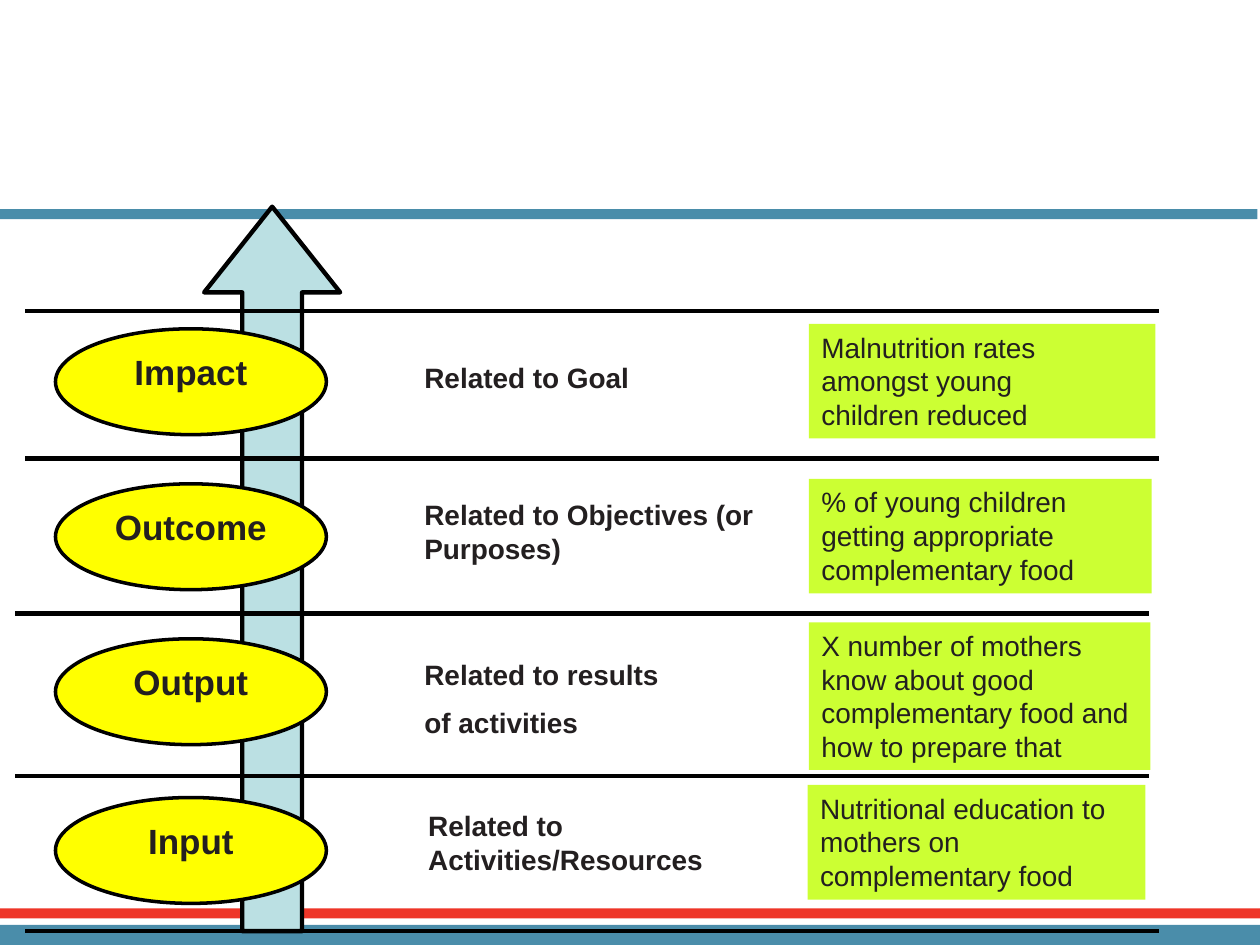
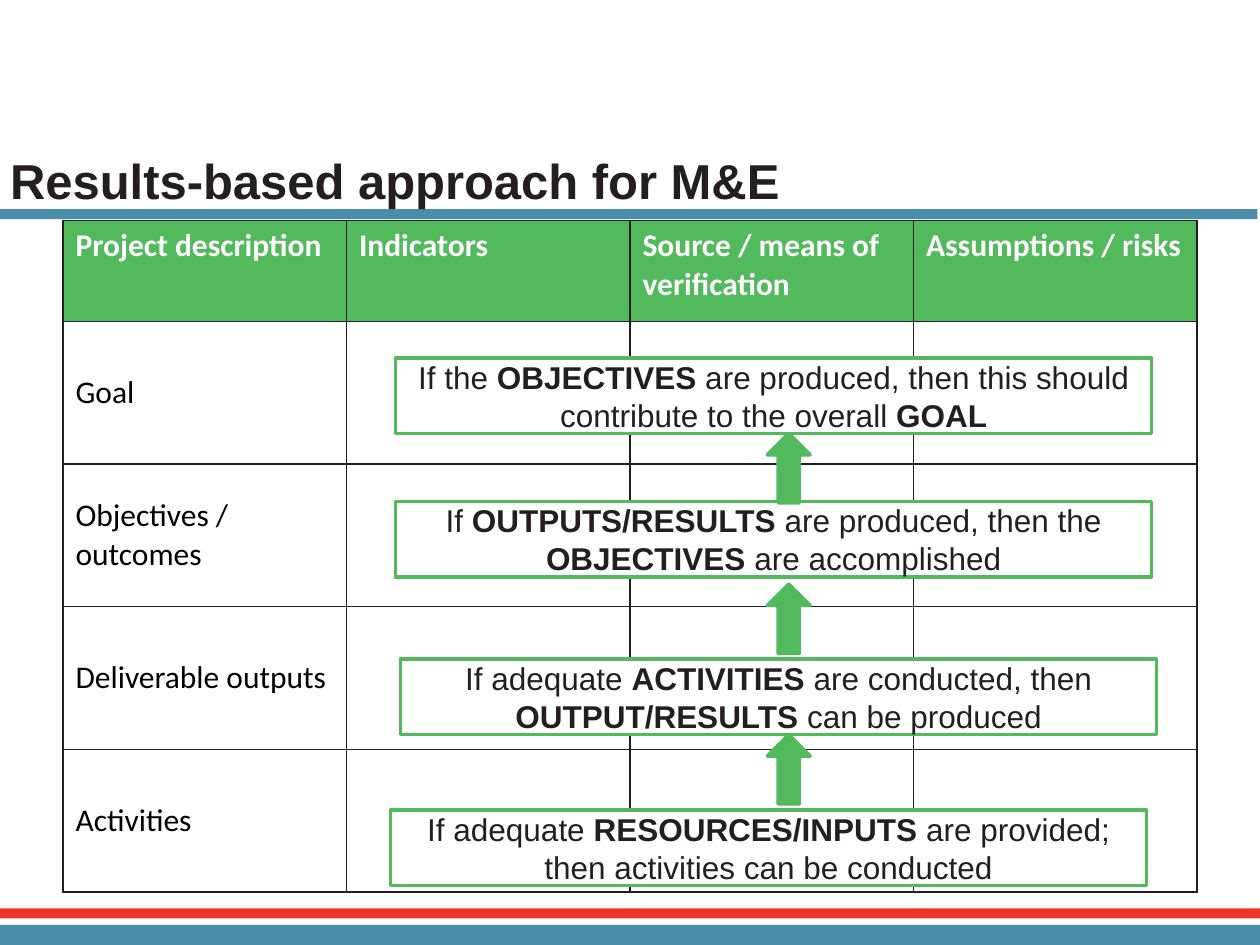
"""Build two slides on the results chain and the results-based approach."""
from dataclasses import dataclass

from lxml.etree import SubElement
from pptx import Presentation
from pptx.dml.color import RGBColor
from pptx.enum.shapes import MSO_CONNECTOR, MSO_SHAPE
from pptx.enum.text import MSO_ANCHOR, MSO_AUTO_SIZE, PP_ALIGN
from pptx.oxml.ns import qn
from pptx.util import Inches, Pt


@dataclass(frozen=True)
class Theme:
    ink: str = "231F20"
    black: str = "000000"
    white: str = "FFFFFF"
    blue: str = "4A8DAA"
    red: str = "EE3528"
    pale: str = "BBE0E3"
    yellow: str = "FFFF00"
    lime: str = "CCFF33"
    green: str = "52BA5C"
    font: str = "Arial"
    grid: str = "Calibri"
    title: int = 28
    level: int = 20
    body: int = 18
    note: int = 16


look = Theme()
prs = Presentation()
prs.slide_width, prs.slide_height = Inches(10), Inches(7.5)
cell = prs.slide_width // 100


def span(*cells):
    """Turn counts of grid cells, 100 across and 75 down, into lengths."""
    return [round(cell * n) for n in cells]


def block(slide, kind, box, fill=None, line=None, width=2, paras=(),
          size=look.note, bold=False, align=PP_ALIGN.LEFT, anchor=MSO_ANCHOR.TOP):
    """Add a shape, or a text box if kind is None; odd runs switch the weight."""
    if kind is None:
        shape = slide.shapes.add_textbox(*span(*box))
    else:
        shape = slide.shapes.add_shape(kind, *span(*box))
        shape.shadow.inherit = False
        shape.fill.solid()
        shape.fill.fore_color.rgb = RGBColor.from_string(fill)
        if line:
            shape.line.color.rgb = RGBColor.from_string(line)
            shape.line.width = Pt(width)
        else:
            shape.line.fill.background()
    frame = shape.text_frame
    frame.word_wrap = True
    frame.vertical_anchor = anchor
    for i, runs in enumerate(paras):
        para = frame.add_paragraph() if i else frame.paragraphs[0]
        para.alignment = align
        if i and kind is None:
            para.space_before = Pt(size / 2)
        for j, text in enumerate(runs):
            run = para.add_run()
            run.text = text
            run.font.name = look.font
            run.font.size = Pt(size)
            run.font.bold = bold != (j % 2 == 1)
            run.font.color.rgb = RGBColor.from_string(look.ink)
    return shape


chain = prs.slides.add_slide(prs.slide_layouts[6])
plan = prs.slides.add_slide(prs.slide_layouts[5])

bands = [(-0.2, 16.6, 0.8, look.blue), (0, 73.4, 1.6, look.blue),
         (0, 72.1, 0.8, look.red)]
for i, (left, top, high, fill) in enumerate(bands):
    band = block(chain, MSO_SHAPE.RECTANGLE, (left, top, 100, high), fill)
    band.element.nvSpPr.cNvPr.set("id", str(20 + i))
    prs.slide_master.shapes.element.insert(2 + i, band.element)

arrow = block(chain, MSO_SHAPE.UP_ARROW, (16.2, 16.4, 10.8, 57.5),
              look.pale, look.black, 2.5)
arrow.adjustments[0], arrow.adjustments[1] = 0.44, 0.63

for left, top in [(2, 73.9), (1.2, 61.6), (1.2, 48.7), (2, 36.4), (2, 24.7)]:
    rule = chain.shapes.add_connector(
        MSO_CONNECTOR.STRAIGHT, *span(left, top, left + 90, top))
    rule.line.color.rgb = RGBColor.from_string(look.black)
    rule.line.width = Pt(2.5)
    SubElement(rule.element.spPr, qn("a:effectLst"))

levels = [
    ("Impact", 26.1, (32.7, 28.1, 29.3, 3.7), ["Related to Goal"],
     (64.2, 25.7, 27.5, 9.1),
     ["Malnutrition rates amongst young", "children reduced"]),
    ("Outcome", 38.4, (32.7, 39, 29.3, 6.4),
     ["Related to Objectives (or Purposes)"],
     (64.2, 38, 27.2, 9.1),
     ["% of young children", "getting appropriate", "complementary food"]),
    ("Output", 50.7, (32.7, 51.7, 29.3, 7.7),
     ["Related to results", "of activities"],
     (64.2, 49.4, 27.1, 11.7),
     ["X number of mothers", "know about good", "complementary food and",
      "how to prepare that"]),
    ("Input", 63.3, (33, 63.7, 29.3, 6.4), ["Related to Activities/Resources"],
     (64.1, 62.3, 26.8, 9.1),
     ["Nutritional education to mothers on complementary food"]),
]
for name, top, spot, link, place, case in levels:
    block(chain, MSO_SHAPE.OVAL, (4.4, top, 21.5, 8.4), look.yellow, look.black,
          paras=[[name]], size=look.level, bold=True, align=PP_ALIGN.CENTER)
    block(chain, None, spot, paras=[[text] for text in link], bold=True)
    block(chain, MSO_SHAPE.RECTANGLE, place, look.lime,
          paras=[[text] for text in case])

title = plan.shapes.title
title.left, title.top, title.width, title.height = span(-0.2, 11.1, 67.7, 6.4)
frame = title.text_frame
frame.word_wrap = True
frame.auto_size = MSO_AUTO_SIZE.NONE
frame.vertical_anchor = MSO_ANCHOR.MIDDLE
frame.paragraphs[0].alignment = PP_ALIGN.LEFT
run = frame.paragraphs[0].add_run()
run.text = "Results-based approach for M&E"
run.font.name, run.font.size, run.font.bold = look.font, Pt(look.title), True
run.font.color.rgb = RGBColor.from_string(look.ink)

heads = ["Project description", "Indicators", "Source / means of verification",
         "Assumptions / risks"]
rows = [heads] + [[name, "", "", ""] for name in (
    "Goal", "Objectives / outcomes", "Deliverable outputs", "Activities")]
table = plan.shapes.add_table(5, 4, *span(5, 17.5, 90, 53.3)).table
for i, row in enumerate(rows):
    table.rows[i].height = span(11.33 if i else 8)[0]
    for j, text in enumerate(row):
        box = table.cell(i, j)
        props = box._tc.get_or_add_tcPr()
        for side in ("a:lnL", "a:lnR", "a:lnT", "a:lnB"):
            edge = SubElement(props, qn(side), w=str(Pt(1)))
            paint = SubElement(edge, qn("a:solidFill"))
            SubElement(paint, qn("a:srgbClr"), val=look.ink)
        box.fill.solid()
        box.fill.fore_color.rgb = RGBColor.from_string(
            look.white if i else look.green)
        box.vertical_anchor = MSO_ANCHOR.MIDDLE if i else MSO_ANCHOR.TOP
        if text:
            run = box.text_frame.paragraphs[0].add_run()
            run.text = text
            run.font.name, run.font.size = look.grid, Pt(look.body)
            run.font.bold = i == 0
            run.font.color.rgb = RGBColor.from_string(
                look.black if i else look.white)

steps = [
    (31.4, 28.4, ["If the ", "OBJECTIVES",
                  " are produced, then this should contribute to the overall ",
                  "GOAL"]),
    (31.4, 39.8, ["If ", "OUTPUTS/RESULTS", " are produced, then the ",
                  "OBJECTIVES", " are accomplished"]),
    (31.8, 52.3, ["If adequate ", "ACTIVITIES ", "are conducted, then ",
                  "OUTPUT/RESULTS", " can be produced"]),
    (31, 64.3, ["If adequate ", "RESOURCES/INPUTS",
                " are provided; then activities can be conducted"]),
]
for left, top, runs in steps:
    block(plan, MSO_SHAPE.RECTANGLE, (left, top, 60, 6), look.white, look.green,
          paras=[runs], size=look.body, align=PP_ALIGN.CENTER,
          anchor=MSO_ANCHOR.MIDDLE)
for i in range(3):
    block(plan, MSO_SHAPE.UP_ARROW, (60.9, 34.4 + 11.95 * i, 3.4, 5.5),
          look.green, look.green)

prs.save("out.pptx")
